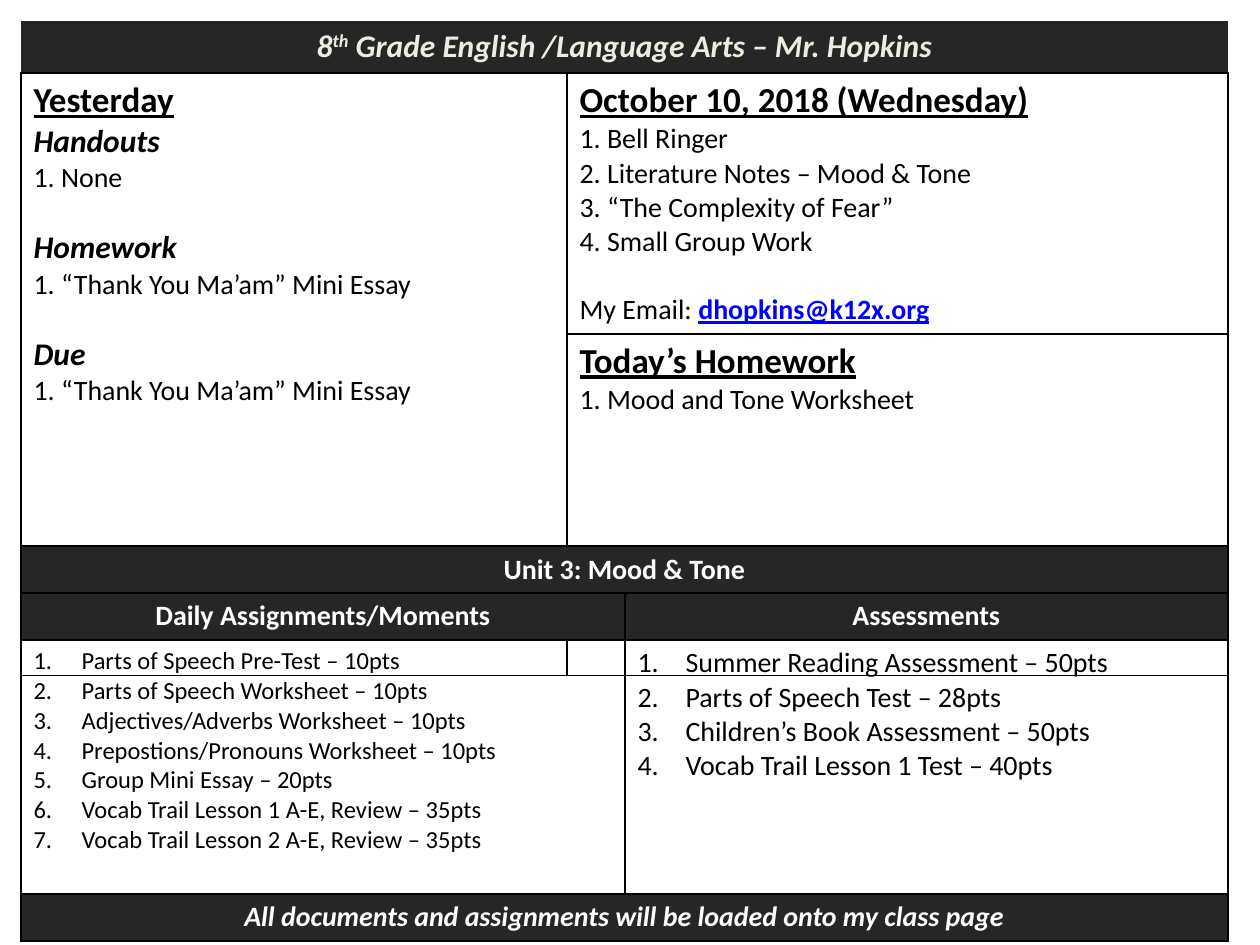
from lxml.etree import SubElement
from pptx import Presentation
from pptx.dml.color import RGBColor
from pptx.enum.text import PP_ALIGN as Align
from pptx.oxml import parse_xml
from pptx.oxml.ns import qn
from pptx.util import Pt

EMU_PER_PX = 914400 / 126
NS = "http://schemas.openxmlformats.org/drawingml/2006/main"
NO_STYLE = "{2D5ABB26-0587-4C30-8999-92F81FD0307C}"
BLACK, WHITE, CREAM, DARK, BLUE = "000000", "FFFFFF", "EEECE1", "262626", "0000FF"
LINE_GAP = 19.5  # points: one line of 16 pt text
LEFT, WIDTH = 21, 1207

# Text styles
HEADING = dict(size=20, bold=True, underline=True)
SUBHEAD = dict(size=18, bold=True, italic=True)
SUBHEAD_GAP = dict(SUBHEAD, before=LINE_GAP)
ITEM = dict(size=16, hang=48)
NUMBERED = dict(size=16, hang=48, numbered=True)
NUMBERED_SMALL = dict(NUMBERED, size=14)
BANNER = dict(size=18, bold=True, italic=True, color=CREAM, align=Align.CENTER)
BAND = dict(size=16, bold=True, color=WHITE, align=Align.CENTER)
FOOTER = dict(BAND, italic=True)

# Content: (text, style); a list in place of text holds (run, run format) pairs
banner = [([("8", {}), ("th", dict(baseline=30000)),
            (" Grade English /Language Arts – Mr. Hopkins", {})], BANNER)]
yesterday = [
    ("Yesterday", HEADING),
    ("Handouts", SUBHEAD),
    ("1. None", ITEM),
    ("Homework", SUBHEAD_GAP),
    ("1. “Thank You Ma’am” Mini Essay", ITEM),
    ("Due", SUBHEAD_GAP),
    ("1. “Thank You Ma’am” Mini Essay", ITEM),
]
today = [
    ("October 10, 2018 (Wednesday)", HEADING),
    ("1. Bell Ringer", ITEM),
    ("2. Literature Notes – Mood & Tone", ITEM),
    ("3. “The Complexity of Fear”", ITEM),
    ("4. Small Group Work", ITEM),
    ([("My Email: ", {}),
      ("dhopkins@k12x.org", dict(bold=True, underline=True, color=BLUE))],
     dict(ITEM, before=LINE_GAP)),
]
homework = [("Today’s Homework", HEADING), ("1. Mood and Tone Worksheet", ITEM)]
assignments = [(text, NUMBERED_SMALL) for text in (
    "Parts of Speech Pre-Test – 10pts",
    "Parts of Speech Worksheet – 10pts",
    "Adjectives/Adverbs Worksheet – 10pts",
    "Prepostions/Pronouns Worksheet – 10pts",
    "Group Mini Essay – 20pts",
    "Vocab Trail Lesson 1 A-E, Review – 35pts",
    "Vocab Trail Lesson 2 A-E, Review – 35pts",
)]
assessments = [(text, NUMBERED) for text in (
    "Summer Reading Assessment – 50pts",
    "Parts of Speech Test – 28pts",
    "Children’s Book Assessment – 50pts",
    "Vocab Trail Lesson 1 Test – 40pts",
)]

# Tables from back to front; None is a cell covered by a merge
tables = [
    dict(top=73, cols=[546, 661], rows=[230, 230], bordered=True,
         cells=[[yesterday, today], [None, homework]],
         merges=[((0, 0), (1, 0))]),
    dict(top=21, cols=[WIDTH], rows=[51], cells=[[banner]], dark_rows=[0]),
    dict(top=546, cols=[604, 603], rows=[47, 47, 254, 47], bordered=True,
         cells=[[[("Unit 3: Mood & Tone", BAND)], None],
                [[("Daily Assignments/Moments", BAND)], [("Assessments", BAND)]],
                [assignments, assessments],
                [[("All documents and assignments will be loaded onto my class page",
                   FOOTER)], None]],
         merges=[((0, 0), (0, 1)), ((3, 0), (3, 1))], dark_rows=[0, 1, 3]),
]


def px(value):
    return round(value * EMU_PER_PX)


def rgb(hex_color):
    return RGBColor.from_string(hex_color)


def set_font(font, size=None, bold=None, italic=None, underline=None, color=None):
    if size:
        font.size = Pt(size)
    font.bold, font.italic, font.underline = bold, italic, underline
    if color:
        font.color.rgb = rgb(color)


def write_paragraph(paragraph, content, size, bold=False, italic=False, underline=False,
                    color=BLACK, align=Align.LEFT, before=0, hang=0, numbered=False):
    paragraph.alignment = align
    if before:
        paragraph.space_before = Pt(before)
    properties = paragraph._p.get_or_add_pPr()
    if hang:
        properties.set("marL", str(px(hang)))
        properties.set("indent", str(-px(hang)))
    if numbered:
        SubElement(properties, qn("a:buFont"), typeface="+mj-lt")
        SubElement(properties, qn("a:buAutoNum"), type="arabicPeriod")
    set_font(paragraph.font, size, bold, italic, underline, color)
    paragraph.font.name = "Calibri"
    for text, run_format in [(content, {})] if isinstance(content, str) else content:
        run = paragraph.add_run()
        run.text = text
        font_format = dict(run_format)
        baseline = font_format.pop("baseline", None)
        set_font(run.font, **font_format)
        if baseline:
            run.font._element.set("baseline", str(baseline))


def write_cell(cell, paragraphs):
    frame = cell.text_frame
    for index, (content, style) in enumerate(paragraphs):
        paragraph = frame.add_paragraph() if index else frame.paragraphs[0]
        write_paragraph(paragraph, content, **style)


def add_borders(cell):
    properties = cell._tc.get_or_add_tcPr()
    for index, side in enumerate("LRTB"):
        properties.insert(index, parse_xml(
            f'<a:ln{side} xmlns:a="{NS}" w="{Pt(1)}"><a:solidFill>'
            f'<a:srgbClr val="{BLACK}"/></a:solidFill></a:ln{side}>'))


def add_grid(slide, top, cols, rows, cells, merges=(), dark_rows=(), bordered=False):
    table = slide.shapes.add_table(len(rows), len(cols), px(LEFT), px(top),
                                   px(WIDTH), px(sum(rows))).table
    table.first_row = table.horz_banding = False
    table._tbl.tblPr.find(qn("a:tableStyleId")).text = NO_STYLE
    for column, width in zip(table.columns, cols):
        column.width = px(width)
    for row, height in zip(table.rows, rows):
        row.height = px(height)
    for start, end in merges:
        table.cell(*start).merge(table.cell(*end))
    for r, row_cells in enumerate(cells):
        for c, paragraphs in enumerate(row_cells):
            cell = table.cell(r, c)
            if r in dark_rows:
                cell.fill.solid()
                cell.fill.fore_color.rgb = rgb(DARK)
            else:
                cell.fill.background()
            if bordered:
                add_borders(cell)
            if paragraphs:
                write_cell(cell, paragraphs)


def main():
    deck = Presentation()
    deck.slide_width, deck.slide_height = px(1260), px(945)
    slide = deck.slides.add_slide(deck.slide_layouts[6])
    for table in tables:
        add_grid(slide, **table)
    deck.save("out.pptx")


if __name__ == "__main__":
    main()
